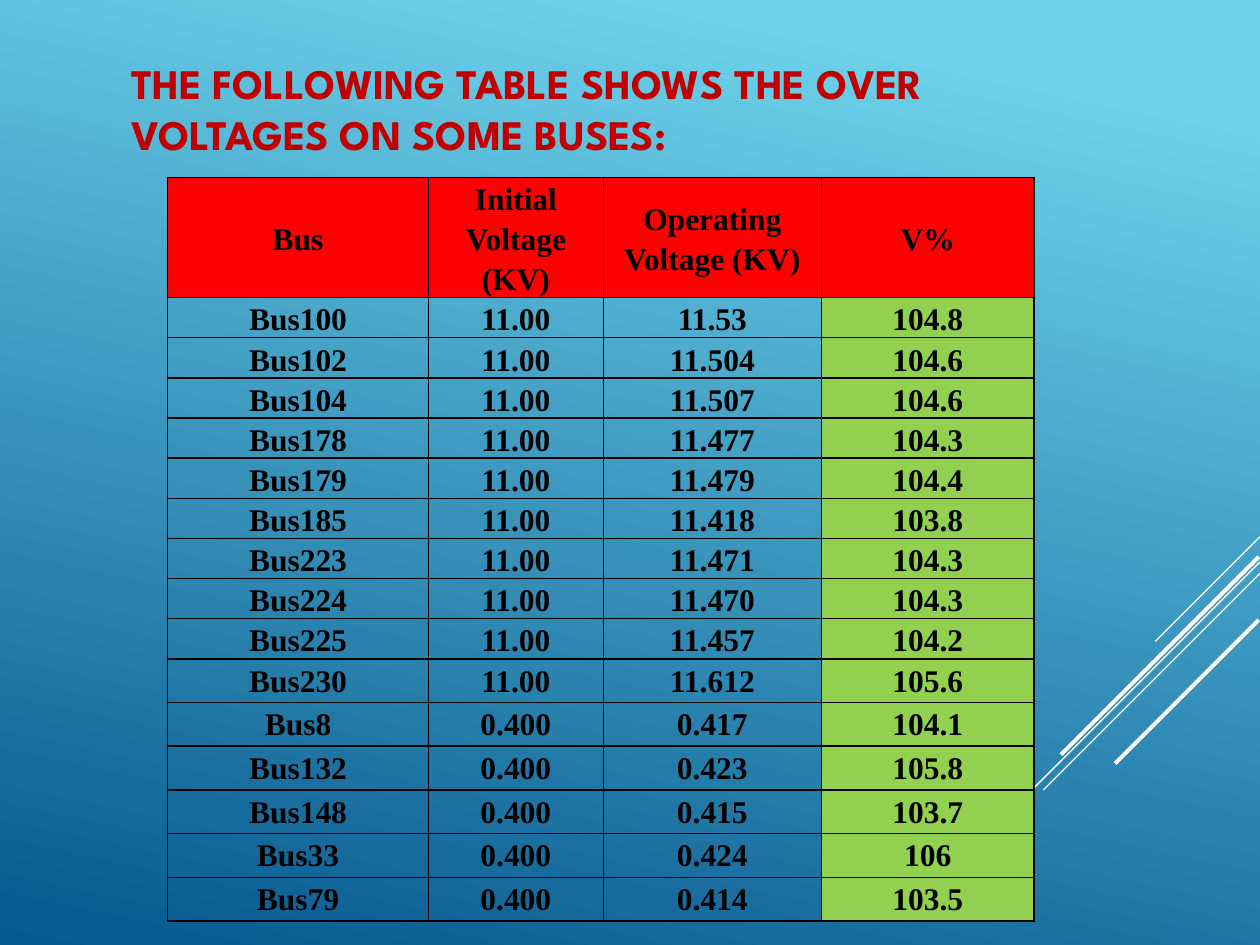
from dataclasses import dataclass

from lxml.etree import SubElement
from pptx import Presentation
from pptx.dml.color import RGBColor
from pptx.enum.shapes import MSO_CONNECTOR
from pptx.enum.text import MSO_ANCHOR, MSO_AUTO_SIZE, PP_ALIGN
from pptx.oxml.ns import qn
from pptx.util import Pt


@dataclass(frozen=True)
class Theme:
    sky: str = "6ED2EB"
    deep: str = "06588E"
    stripe: str = "FFFFFF"
    title: str = "C00000"
    header: str = "FF0000"
    percent: str = "92D050"
    ink: str = "000000"
    title_font: str = "League Spartan"
    table_font: str = "Times New Roman"
    title_size: int = 24
    table_size: int = 18


THEME = Theme()

TITLE = "THE FOLLOWING TABLE SHOWS THE OVER VOLTAGES ON SOME BUSES:"
HEADINGS = ("Bus", "Initial Voltage (KV)", "Operating Voltage (KV)", "V%")
READINGS = (
    ("Bus100", "11.00", "11.53", "104.8"),
    ("Bus102", "11.00", "11.504", "104.6"),
    ("Bus104", "11.00", "11.507", "104.6"),
    ("Bus178", "11.00", "11.477", "104.3"),
    ("Bus179", "11.00", "11.479", "104.4"),
    ("Bus185", "11.00", "11.418", "103.8"),
    ("Bus223", "11.00", "11.471", "104.3"),
    ("Bus224", "11.00", "11.470", "104.3"),
    ("Bus225", "11.00", "11.457", "104.2"),
    ("Bus230", "11.00", "11.612", "105.6"),
    ("Bus8", "0.400", "0.417", "104.1"),
    ("Bus132", "0.400", "0.423", "105.8"),
    ("Bus148", "0.400", "0.415", "103.7"),
    ("Bus33", "0.400", "0.424", "106"),
    ("Bus79", "0.400", "0.414", "103.5"),
)
COLUMN_WIDTHS = (149, 100, 124.6, 121.6)
ROW_HEIGHTS = (67,) + (22.6,) * 9 + (25,) * 6
STRIPES = (
    (720, 306.7, 59.8, 0.75),
    (720, 321.1, 194.8, 0.75),
    (720, 327.6, 123.8, 0.75),
    (719.3, 318.2, 113, 2.25),
    (719.3, 354.2, 82.1, 2.25),
)


def color(code):
    return RGBColor.from_string(code)


def format_font(font, face, size, code):
    font.name = face
    font.size = Pt(size)
    font.bold = True
    font.color.rgb = color(code)


def paint_background(slide):
    fill = slide.background.fill
    fill.gradient()
    fill.gradient_angle = 258
    sky, deep = fill.gradient_stops
    sky.color.rgb, sky.position = color(THEME.sky), 0.1
    deep.color.rgb, deep.position = color(THEME.deep), 1


def add_stripe(slide, right, top, run, width):
    stripe = slide.shapes.add_connector(
        MSO_CONNECTOR.STRAIGHT, Pt(right), Pt(top), Pt(right - run), Pt(top + run)
    )
    stripe.line.color.rgb = color(THEME.stripe)
    stripe.line.width = Pt(width)
    SubElement(stripe.element.spPr, qn("a:effectLst"))


def set_title(slide):
    title = slide.shapes.title
    title.left, title.top, title.width, title.height = Pt(67.7), Pt(0), Pt(545.8), Pt(123.8)
    frame = title.text_frame
    frame.text = TITLE
    frame.word_wrap = True
    frame.auto_size = MSO_AUTO_SIZE.NONE
    frame.vertical_anchor = MSO_ANCHOR.MIDDLE
    heading = frame.paragraphs[0]
    heading.alignment = PP_ALIGN.LEFT
    format_font(heading.runs[0].font, THEME.title_font, THEME.title_size, THEME.title)


def add_borders(cell):
    properties = cell._tc.get_or_add_tcPr()
    for side in ("a:lnL", "a:lnR", "a:lnT", "a:lnB"):
        border = SubElement(properties, qn(side), w=str(Pt(1)))
        SubElement(SubElement(border, qn("a:solidFill")), qn("a:srgbClr"), val=THEME.ink)


def format_cell(cell, text, fill_code, anchor):
    add_borders(cell)
    if fill_code:
        cell.fill.solid()
        cell.fill.fore_color.rgb = color(fill_code)
    else:
        cell.fill.background()
    cell.margin_left = cell.margin_right = Pt(5)
    cell.margin_top = cell.margin_bottom = Pt(0)
    cell.vertical_anchor = anchor
    cell.text_frame.text = text
    paragraph = cell.text_frame.paragraphs[0]
    paragraph.alignment = PP_ALIGN.CENTER
    paragraph.line_spacing = 1.15
    format_font(paragraph.runs[0].font, THEME.table_font, THEME.table_size, THEME.ink)


def add_voltage_table(slide):
    voltages = slide.shapes.add_table(
        len(ROW_HEIGHTS), len(COLUMN_WIDTHS), Pt(95.8), Pt(101.3),
        Pt(sum(COLUMN_WIDTHS)), Pt(sum(ROW_HEIGHTS)),
    ).table
    voltages.horz_banding = False
    for column, width in zip(voltages.columns, COLUMN_WIDTHS):
        column.width = Pt(width)
    for row, height in zip(voltages.rows, ROW_HEIGHTS):
        row.height = Pt(height)
    for cell, heading in zip(voltages.rows[0].cells, HEADINGS):
        format_cell(cell, heading, THEME.header, MSO_ANCHOR.MIDDLE)
    reading_fills = (None, None, None, THEME.percent)
    for row_index, reading in enumerate(READINGS, start=1):
        for cell, value, fill_code in zip(voltages.rows[row_index].cells, reading, reading_fills):
            format_cell(cell, value, fill_code, MSO_ANCHOR.TOP)


def main():
    presentation = Presentation()
    presentation.slide_width, presentation.slide_height = Pt(720), Pt(540)
    slide = presentation.slides.add_slide(presentation.slide_layouts[5])
    paint_background(slide)
    for stripe in STRIPES:
        add_stripe(slide, *stripe)
    set_title(slide)
    add_voltage_table(slide)
    presentation.save("out.pptx")


if __name__ == "__main__":
    main()
